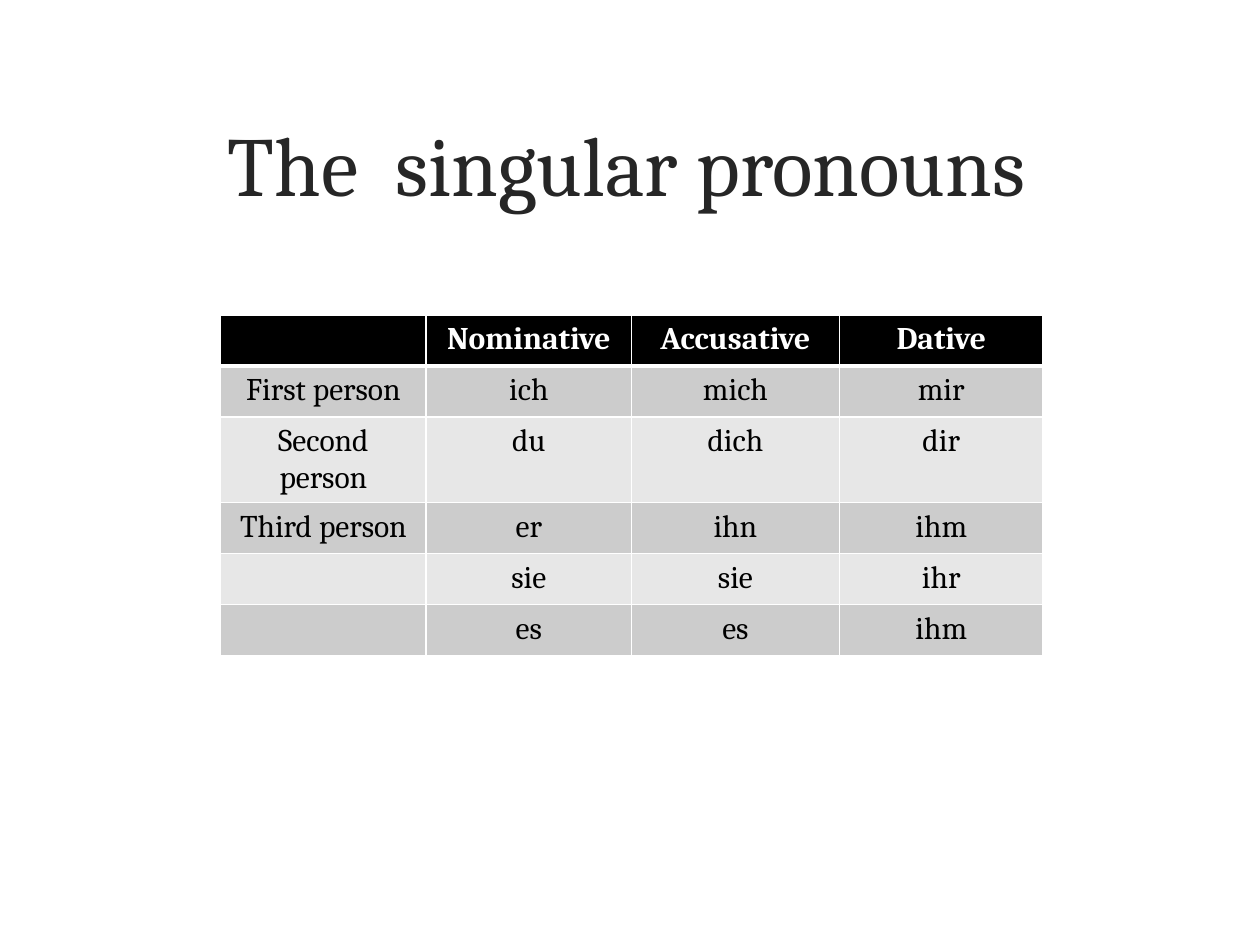
from dataclasses import dataclass

from lxml.etree import SubElement
from pptx import Presentation
from pptx.dml.color import RGBColor
from pptx.enum.text import MSO_ANCHOR, PP_ALIGN
from pptx.oxml.ns import qn
from pptx.util import Cm, Pt


@dataclass(frozen=True)
class Theme:
    font: str = "Cambria"
    title_size: int = 48
    table_size: int = 18
    title_color: str = "262626"
    header_fill: str = "000000"
    header_text: str = "FFFFFF"
    body_text: str = "000000"
    bands: tuple = ("CCCCCC", "E7E7E7")
    grid: str = "FFFFFF"
    grid_width: int = 1
    header_rule_width: int = 3


THEME = Theme()

PRONOUNS = [
    ["", "Nominative", "Accusative", "Dative"],
    ["First person", "ich", "mich", "mir"],
    ["Second person", "du", "dich", "dir"],
    ["Third person", "er", "ihn", "ihm"],
    ["", "sie", "sie", "ihr"],
    ["", "es", "es", "ihm"],
]
COLUMN_WIDTHS = [4.14, 4.14, 4.19, 4.11]
ROW_HEIGHT = 1.03


def format_text(frame, size, color, bold=False):
    for paragraph in frame.paragraphs:
        paragraph.alignment = PP_ALIGN.CENTER
        for run in paragraph.runs:
            run.font.name = THEME.font
            run.font.size = Pt(size)
            run.font.bold = bold
            run.font.color.rgb = RGBColor.from_string(color)


def add_title(slide, wording):
    title = slide.shapes.title
    title.left, title.top = Cm(1.47), Cm(1.27)
    title.width, title.height = Cm(22.33), Cm(4.01)
    title.text_frame.text = wording
    title.text_frame.vertical_anchor = MSO_ANCHOR.MIDDLE
    format_text(title.text_frame, THEME.title_size, THEME.title_color)


def set_borders(cell, top, bottom):
    widths = {"L": THEME.grid_width, "R": THEME.grid_width, "T": top, "B": bottom}
    properties = cell._tc.get_or_add_tcPr()
    for side, width in widths.items():
        border = SubElement(properties, qn(f"a:ln{side}"), w=str(Pt(width)))
        fill = SubElement(border, qn("a:solidFill"))
        SubElement(fill, qn("a:srgbClr"), val=THEME.grid)


def format_cell(cell, row):
    is_header = row == 0
    # Borders come before the fill in the cell properties
    set_borders(
        cell,
        top=THEME.header_rule_width if row == 1 else THEME.grid_width,
        bottom=THEME.header_rule_width if is_header else THEME.grid_width,
    )
    background = THEME.header_fill if is_header else THEME.bands[(row - 1) % 2]
    cell.fill.solid()
    cell.fill.fore_color.rgb = RGBColor.from_string(background)
    color = THEME.header_text if is_header else THEME.body_text
    format_text(cell.text_frame, THEME.table_size, color, bold=is_header)


def add_pronoun_table(slide, rows):
    table = slide.shapes.add_table(
        len(rows), len(COLUMN_WIDTHS), Cm(4.45), Cm(6.35),
        Cm(sum(COLUMN_WIDTHS)), Cm(ROW_HEIGHT * len(rows)),
    ).table
    for column, width in zip(table.columns, COLUMN_WIDTHS):
        column.width = Cm(width)
    for row, words in enumerate(rows):
        table.rows[row].height = Cm(ROW_HEIGHT)
        for column, word in enumerate(words):
            cell = table.cell(row, column)
            if word:
                cell.text_frame.text = word
            format_cell(cell, row)


def main():
    presentation = Presentation()
    presentation.slide_width, presentation.slide_height = Cm(25.4), Cm(19.05)
    slide = presentation.slides.add_slide(presentation.slide_layouts[5])

    # Heading
    add_title(slide, "The  singular pronouns")

    # Pronouns by person and case
    add_pronoun_table(slide, PRONOUNS)

    presentation.save("out.pptx")


if __name__ == "__main__":
    main()
